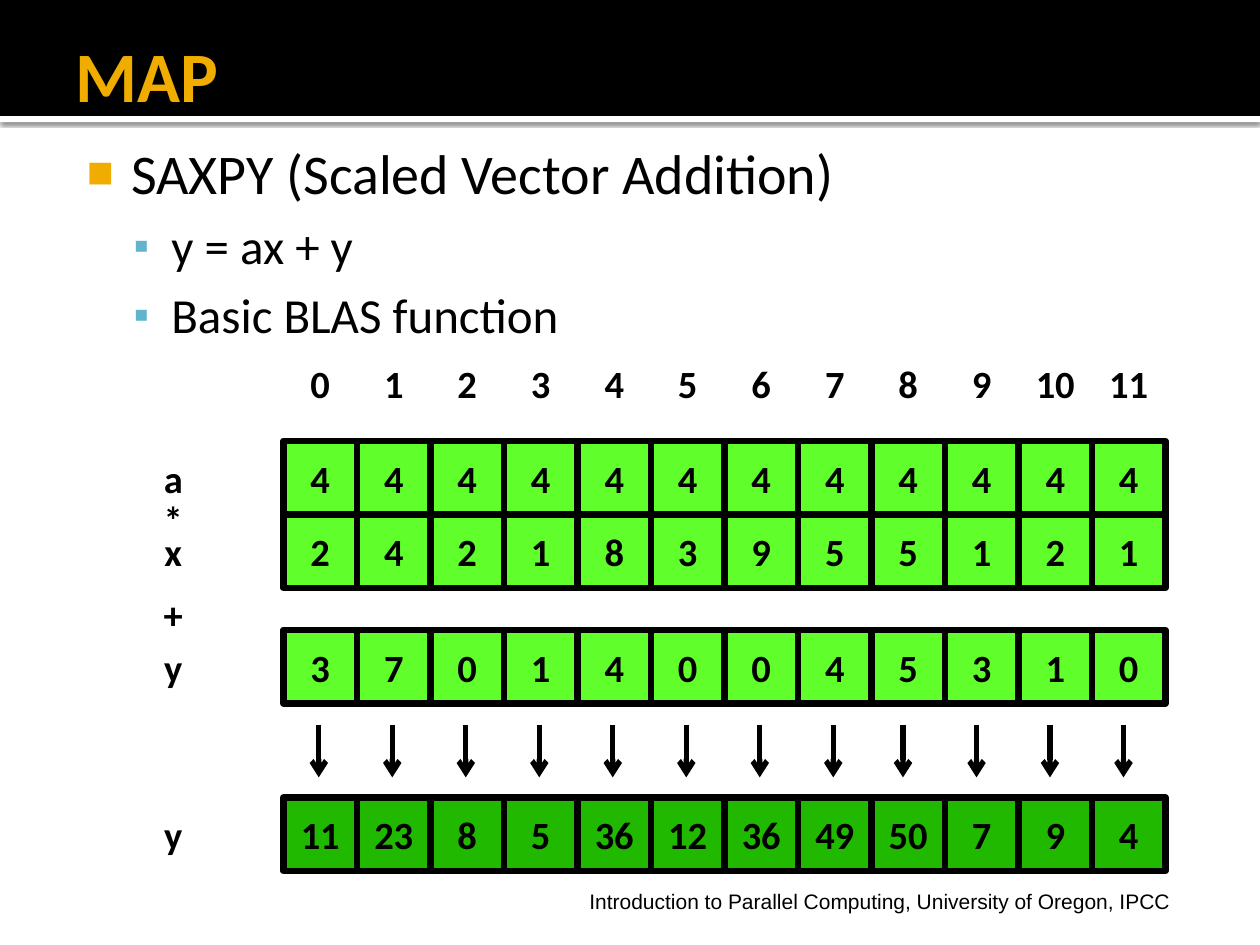
from lxml import etree
from pptx import Presentation, util as u
from pptx.dml.color import RGBColor
from pptx.enum import shapes, text
from pptx.oxml import ns

COLORS = {
    "black": "000000",
    "white": "FFFFFF",
    "gold": "F0AD00",
    "blue": "60B5CC",
    "input": "60FF2C",
    "output": "21B800",
}
CELL = 7 / 12
GRID_LEFT = 2.25
LABEL_LEFT, LABEL_WIDTH = 0.75, 1.25


def add_run(paragraph, words, size, color="black", bold=False, font="Calibri"):
    run = paragraph.add_run()
    run.text = words
    run.font.size = u.Pt(size)
    run.font.name = font
    run.font.bold = bold
    run.font.color.rgb = RGBColor.from_string(COLORS[color])


def add_box(left, top, width, words, fill=None):
    box = (u.Inches(left), u.Inches(top), u.Inches(width), u.Inches(CELL))
    if fill:
        shape = slide.shapes.add_shape(shapes.MSO_SHAPE.RECTANGLE, *box)
        shape.shadow.inherit = False
        shape.fill.solid()
        shape.fill.fore_color.rgb = RGBColor.from_string(COLORS[fill])
        shape.line.color.rgb = RGBColor.from_string(COLORS["black"])
        shape.line.width = u.Pt(3.78)
    else:
        shape = slide.shapes.add_textbox(*box)
    frame = shape.text_frame
    frame.word_wrap = True
    frame.vertical_anchor = text.MSO_ANCHOR.MIDDLE
    frame.paragraphs[0].alignment = text.PP_ALIGN.CENTER
    add_run(frame.paragraphs[0], words, 22, bold=True)


presentation = Presentation()
presentation.slide_width = u.Inches(10)
presentation.slide_height = u.Inches(7.5)
slide = presentation.slides.add_slide(presentation.slide_layouts[1])
title, body = slide.placeholders

for top, height, color in [(0.92, 0.05, "white"), (0, 0.92, "black")]:
    band = slide.shapes.add_shape(
        shapes.MSO_SHAPE.RECTANGLE, 0, u.Inches(top), u.Inches(10), u.Inches(height)
    )
    band.shadow.inherit = False
    band.fill.solid()
    band.fill.fore_color.rgb = RGBColor.from_string(COLORS[color])
    band.line.fill.background()
    if color == "white":
        effects = band._element.spPr.find(ns.qn("a:effectLst"))
        shadow = etree.SubElement(
            effects, ns.qn("a:outerShdw"), blurRad=str(u.Pt(2.5)),
            dist=str(u.Pt(0.8)), dir="5400000", algn="tl", rotWithShape="0",
        )
        shade = etree.SubElement(shadow, ns.qn("a:srgbClr"), val=COLORS["black"])
        etree.SubElement(shade, ns.qn("a:alpha"), val="60000")

for placeholder, top, height, margins in [
    (title, 0.17, 0.83, (0.1, 0.05, 0.05, 0.05)),
    (body, 1, 6, (0.06, 0.1, 0.1, 0.05)),
]:
    slide.shapes._spTree.append(placeholder._element)
    placeholder.left, placeholder.top = u.Inches(0.5), u.Inches(top)
    placeholder.width, placeholder.height = u.Inches(9), u.Inches(height)
    frame = placeholder.text_frame
    frame.auto_size = text.MSO_AUTO_SIZE.NONE
    frame.margin_left, frame.margin_top, frame.margin_right, frame.margin_bottom = map(
        u.Inches, margins
    )

title.text_frame.vertical_anchor = text.MSO_ANCHOR.MIDDLE
title.text_frame.paragraphs[0].alignment = text.PP_ALIGN.LEFT
add_run(title.text_frame.paragraphs[0], "MAP", 40.5, "gold", bold=True)

levels = [
    (32, 0, 0.48, -0.35, "■", "gold", 80),
    (28, 5.6, 0.8, -0.3, "▪", "blue", 90),
]
bullets = [
    ("SAXPY (Scaled Vector Addition)", 0),
    ("y = ax + y", 1),
    ("Basic BLAS function", 1),
]
for index, (words, level) in enumerate(bullets):
    size, space, margin, indent, symbol, color, percent = levels[level]
    frame = body.text_frame
    paragraph = frame.add_paragraph() if index else frame.paragraphs[0]
    paragraph.level = level
    paragraph.space_before = u.Pt(space)
    properties = paragraph._p.get_or_add_pPr()
    properties.set("marL", str(u.Inches(margin)))
    properties.set("indent", str(u.Inches(indent)))
    bullet_color = etree.SubElement(properties, ns.qn("a:buClr"))
    etree.SubElement(bullet_color, ns.qn("a:srgbClr"), val=COLORS[color])
    etree.SubElement(properties, ns.qn("a:buSzPct"), val=str(percent * 1000))
    etree.SubElement(properties, ns.qn("a:buChar"), char=symbol)
    add_run(paragraph, words, size)

rows = [
    ("", 2.75, None, range(12)),
    ("a", 3.5, "input", [4] * 12),
    ("x", 3.5 + CELL, "input", [2, 4, 2, 1, 8, 3, 9, 5, 5, 1, 2, 1]),
    ("y", 5, "input", [3, 7, 0, 1, 4, 0, 0, 4, 5, 3, 1, 0]),
    ("y", 6.33, "output", [11, 23, 8, 5, 36, 12, 36, 49, 50, 7, 9, 4]),
]
for label, top, fill, values in rows:
    if label:
        add_box(LABEL_LEFT, top, LABEL_WIDTH, label)
    for column, value in enumerate(values):
        add_box(GRID_LEFT + column * CELL, top, CELL, str(value), fill)

for operator, top in [("*", 3.83), ("+", 4.58)]:
    add_box(LABEL_LEFT, top, LABEL_WIDTH, operator)

for column in range(12):
    first = 2.53 if column < 8 else 2.5
    x = u.Inches(first + column * CELL)
    arrow = slide.shapes.add_connector(
        shapes.MSO_CONNECTOR.STRAIGHT, x, u.Inches(5.75), x, u.Inches(6.17)
    )
    arrow.line.color.rgb = RGBColor.from_string(COLORS["black"])
    arrow.line.width = u.Pt(3)
    etree.SubElement(arrow.line._get_or_add_ln(), ns.qn("a:tailEnd"), type="arrow")
    etree.SubElement(arrow._element.spPr, ns.qn("a:effectLst"))

credit = slide.shapes.add_textbox(
    u.Inches(4.58), u.Inches(7), u.Inches(7.33), u.Inches(0.3)
)
credit.text_frame.word_wrap = True
credit.text_frame.auto_size = text.MSO_AUTO_SIZE.SHAPE_TO_FIT_TEXT
add_run(
    credit.text_frame.paragraphs[0],
    "Introduction to Parallel Computing, University of Oregon, IPCC",
    12,
    font="Arial",
)

presentation.save("out.pptx")
